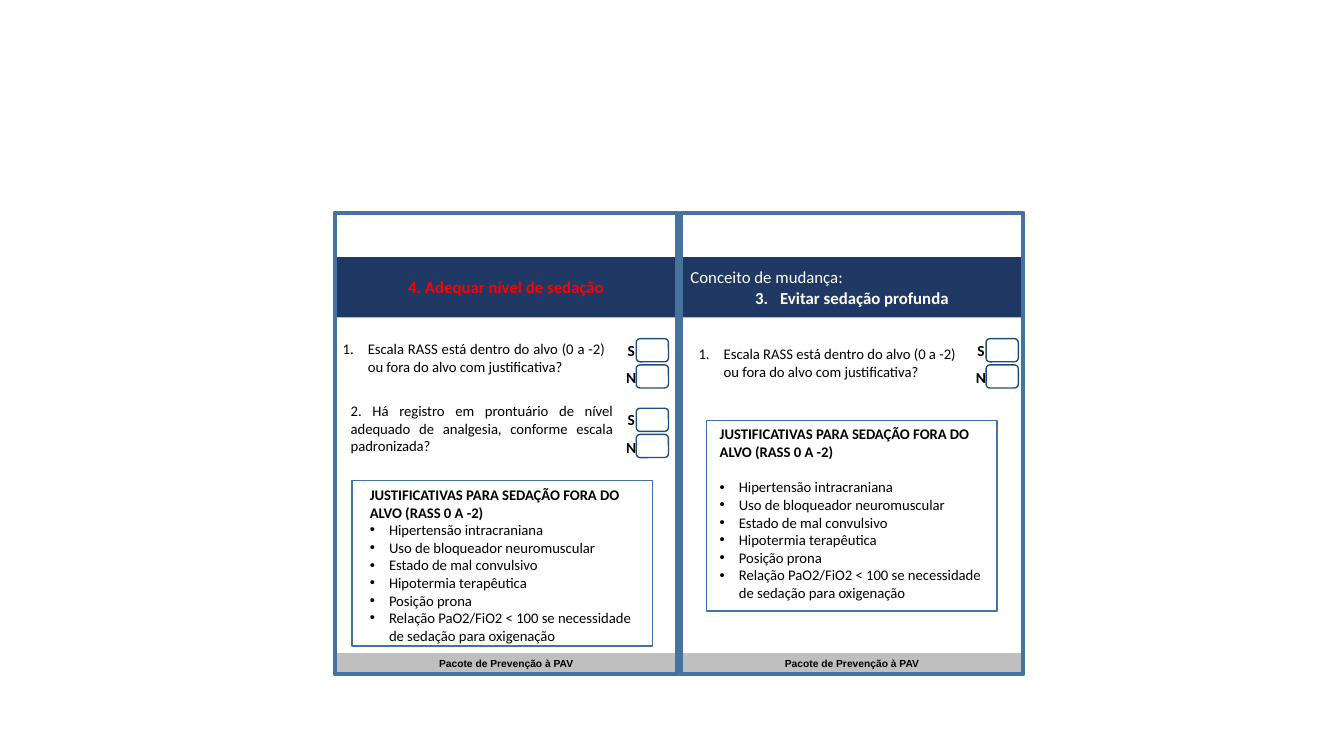
import pptx
import pptx.util
import pptx.dml.color
import pptx.enum.shapes
import pptx.enum.text
import lxml.etree
from pptx.oxml.ns import qn

Inches, Pt = pptx.util.Inches, pptx.util.Pt
SHAPE = pptx.enum.shapes.MSO_SHAPE
ALIGN = pptx.enum.text.PP_ALIGN
ANCHOR = pptx.enum.text.MSO_ANCHOR

COLORS = {"white": "FFFFFF", "black": "000000", "red": "FF0000", "band": "203864",
          "footer": "BFBFBF", "frame": "43739E", "check": "1F4E79"}

CARD_WIDTH, CARD_HEIGHT = 3.4, 4.58
CARD_TOP, CARD_LEFT, CARD_PITCH = 2.11, 3.32, 3.43
RASS_QUESTION = "Escala RASS está dentro do alvo (0 a -2) ou fora do alvo com justificativa?"
ANALGESIA_QUESTION = ("2. Há registro em prontuário de nível adequado de analgesia, "
                      "conforme escala padronizada?")
REASONS_TITLE = "JUSTIFICATIVAS PARA SEDAÇÃO FORA DO ALVO (RASS 0 A -2)"
REASONS = [
    "Hipertensão intracraniana",
    "Uso de bloqueador neuromuscular",
    "Estado de mal convulsivo",
    "Hipotermia terapêutica",
    "Posição prona",
    "Relação PaO2/FiO2 < 100 se necessidade de sedação para oxigenação",
]


def color(name):
    return pptx.dml.color.RGBColor.from_string(COLORS[name])


def add_box(slide, left, top, width, height, fill=None, line=None, weight=1, kind=SHAPE.RECTANGLE):
    box = slide.shapes.add_shape(kind, Inches(left), Inches(top), Inches(width), Inches(height))
    box.shadow.inherit = False
    if fill:
        box.fill.solid()
        box.fill.fore_color.rgb = color(fill)
    else:
        box.fill.background()
    if line:
        box.line.color.rgb = color(line)
        box.line.width = Pt(weight)
    else:
        box.line.fill.background()
    box.text_frame.word_wrap = True
    box.text_frame.vertical_anchor = ANCHOR.MIDDLE
    return box


def add_text_box(slide, left, top, width, height, anchor=ANCHOR.MIDDLE):
    box = slide.shapes.add_textbox(Inches(left), Inches(top), Inches(width), Inches(height))
    box.text_frame.word_wrap = True
    box.text_frame.vertical_anchor = anchor
    return box


def write(box, text, size=10.5, ink="black", bold=False, font="Calibri", align=ALIGN.LEFT):
    """Fill the first paragraph, or append one when it already has text."""
    frame = box.text_frame
    para = frame.add_paragraph() if frame.text else frame.paragraphs[0]
    para.alignment = align
    span = para.add_run()
    span.text = text
    span.font.size = Pt(size)
    span.font.name = font
    span.font.bold = bold
    span.font.color.rgb = color(ink)
    return para


def set_marker(para, indent, bullet=None, start=1):
    """Hang the paragraph on a bullet character, or on a number from start."""
    props = para._p.get_or_add_pPr()
    props.set("marL", str(Inches(indent)))
    props.set("indent", str(-Inches(indent)))
    if bullet:
        lxml.etree.SubElement(props, qn("a:buFont"), typeface="Arial")
        lxml.etree.SubElement(props, qn("a:buChar"), char=bullet)
    else:
        lxml.etree.SubElement(props, qn("a:buFont"), typeface="+mj-lt")
        lxml.etree.SubElement(props, qn("a:buAutoNum"), type="arabicPeriod", startAt=str(start))


def add_card(slide, left):
    """Draw frame, title band and footer; return the band."""
    band = add_box(slide, left, CARD_TOP + 0.44, CARD_WIDTH, 0.6, fill="band")
    footer = add_box(slide, left, CARD_TOP + 4.37, CARD_WIDTH, 0.21, fill="footer")
    write(footer, "Pacote de Prevenção à PAV", 7.3, bold=True, font="Arial", align=ALIGN.CENTER)
    add_box(slide, left, CARD_TOP, CARD_WIDTH, CARD_HEIGHT, line="frame", weight=3)
    return band


def add_question(slide, left, top, text, align=ALIGN.LEFT):
    return write(add_text_box(slide, left, top, 2.8, 0.64), text, align=align)


def add_yes_no(slide, left, top):
    for row, letter in enumerate("SN"):
        add_box(slide, left, top + 0.26 * row, 0.32, 0.23, line="check", kind=SHAPE.ROUNDED_RECTANGLE)
        label = add_text_box(slide, left - 0.17, top + 0.03 + 0.27 * row, 0.24, 0.17)
        frame = label.text_frame
        frame.margin_left = frame.margin_right = frame.margin_top = frame.margin_bottom = 0
        write(label, letter, 11, bold=True, align=ALIGN.CENTER)


def add_reasons(slide, left, top, width, height, text_shift, title_gap):
    add_box(slide, left, top, width, height, fill="white", line="frame")
    box = add_text_box(slide, left + text_shift, top, width - 0.02, height, ANCHOR.TOP)
    write(box, REASONS_TITLE, bold=True).space_after = Pt(title_gap)
    for reason in REASONS:
        set_marker(write(box, reason), 0.19, bullet="•")


def add_sedation_level(slide, left):
    band = add_card(slide, left)
    write(band, "4. Adequar nível de sedação", 12, "red", bold=True, align=ALIGN.CENTER)
    set_marker(add_question(slide, left - 0.02, CARD_TOP + 1.12, RASS_QUESTION, ALIGN.JUSTIFY), 0.25)
    add_question(slide, left + 0.06, CARD_TOP + 1.82, ANALGESIA_QUESTION, ALIGN.JUSTIFY)
    for top in (1.25, 1.94):
        add_yes_no(slide, left + 2.99, CARD_TOP + top)
    add_reasons(slide, left + 0.17, CARD_TOP + 2.66, 2.98, 1.64, 0.08, 0)


def add_deep_sedation(slide, left):
    band = add_card(slide, left)
    write(band, "Conceito de mudança:", 12, "white")
    title = write(band, "Evitar sedação profunda", 12, "white", bold=True, align=ALIGN.CENTER)
    set_marker(title, 0.25, start=3)
    set_marker(add_question(slide, left + 0.08, CARD_TOP + 1.17, RASS_QUESTION), 0.25)
    add_yes_no(slide, left + 3.03, CARD_TOP + 1.25)
    add_reasons(slide, left + 0.26, CARD_TOP + 2.06, 2.88, 1.89, 0.03, 12.6)


def main():
    deck = pptx.Presentation()
    deck.slide_width, deck.slide_height = Inches(13.33), Inches(7.5)
    slide = deck.slides.add_slide(deck.slide_layouts[6])
    add_sedation_level(slide, CARD_LEFT)
    add_deep_sedation(slide, CARD_LEFT + CARD_PITCH)
    deck.save("out.pptx")


if __name__ == "__main__":
    main()
